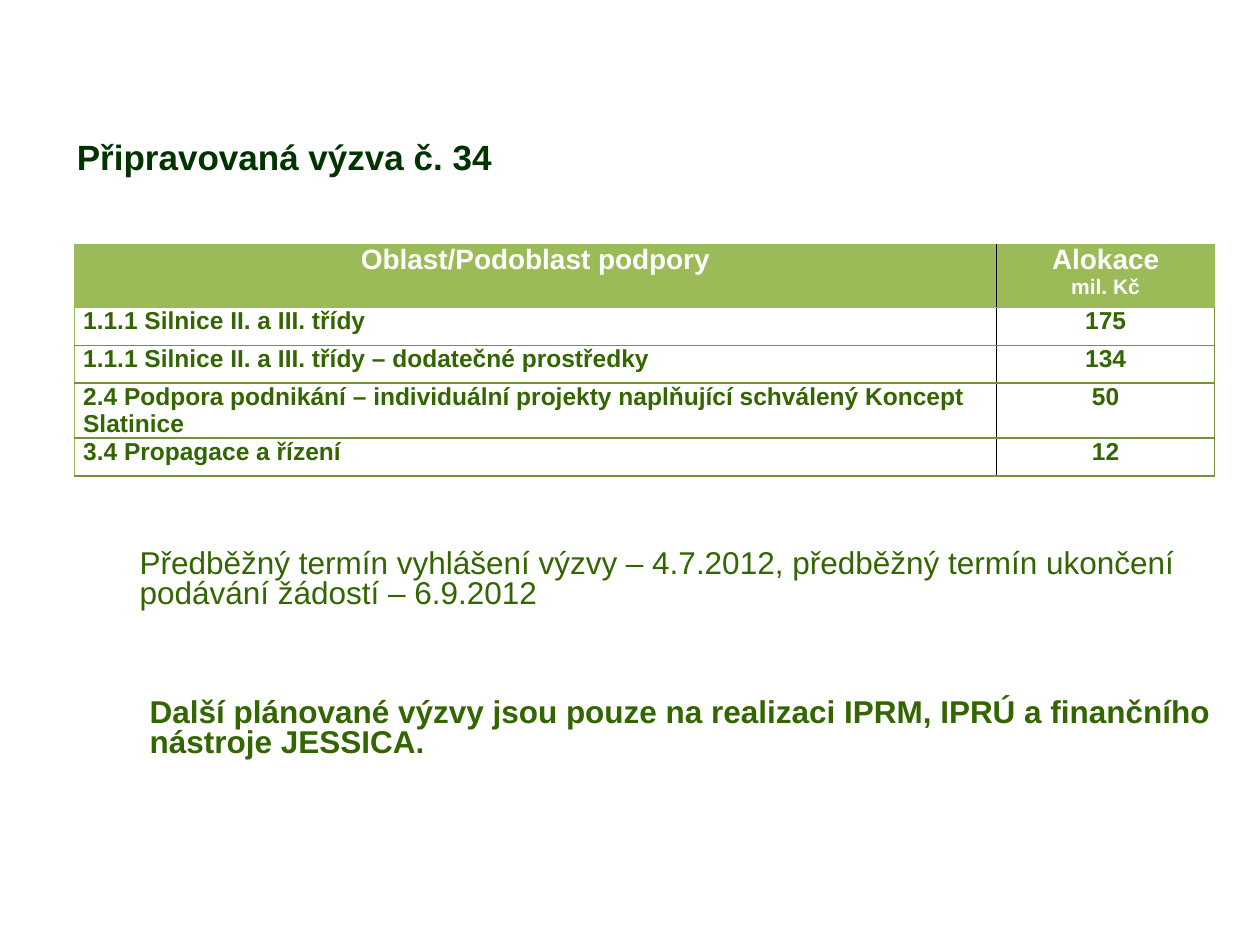
from dataclasses import dataclass

import pptx
import pptx.dml.color
import pptx.enum.text
import pptx.oxml
import pptx.oxml.ns
import pptx.util

Inches = pptx.util.Inches
ALIGN = pptx.enum.text.PP_ALIGN


@dataclass(frozen=True)
class Theme:
    font: str = "Arial"
    title: str = "003300"
    text: str = "336600"
    white: str = "FFFFFF"
    header: str = "9BBB59"
    rule: str = "76923C"
    divider: str = "000000"
    title_size: int = 20
    note_size: int = 18
    header_size: int = 16
    cell_size: int = 14
    unit_size: int = 12
    line_spacing: float = 0.8


class SlideBuilder:
    def __init__(self, page, theme):
        self.page = page
        self.theme = theme

    def style(self, para, size, color, bold=True, align=ALIGN.LEFT):
        para.alignment = align
        for span in para.runs:
            span.font.name = self.theme.font
            span.font.size = pptx.util.Pt(size)
            span.font.bold = bold
            span.font.color.rgb = pptx.dml.color.RGBColor.from_string(color)

    def fill_box(self, box, text, size, color, bold):
        frame = box.text_frame
        frame.word_wrap = True
        frame.auto_size = pptx.enum.text.MSO_AUTO_SIZE.NONE
        frame.vertical_anchor = pptx.enum.text.MSO_ANCHOR.TOP
        frame.text = text
        para = frame.paragraphs[0]
        para.line_spacing = self.theme.line_spacing
        self.style(para, size, color, bold)

    def title(self, text, left, top, width, height):
        box = self.page.shapes.title
        box.left, box.top = Inches(left), Inches(top)
        box.width, box.height = Inches(width), Inches(height)
        self.fill_box(box, text, self.theme.title_size, self.theme.title, True)

    def note(self, text, left, top, width, height, bold=False):
        box = self.page.shapes.add_textbox(
            Inches(left), Inches(top), Inches(width), Inches(height))
        self.fill_box(box, text, self.theme.note_size, self.theme.text, bold)

    def borders(self, cell, sides):
        properties = cell._tc.get_or_add_tcPr()
        namespace = pptx.oxml.ns.nsdecls("a")
        drawn = [side for side in "LRTB" if side in sides]
        for index, side in enumerate(drawn):
            properties.insert(index, pptx.oxml.parse_xml(
                f'<a:ln{side} {namespace} w="12700"><a:solidFill>'
                f'<a:srgbClr val="{sides[side]}"/></a:solidFill></a:ln{side}>'))

    def cell(self, cell, text, header, first_column, below_header):
        theme = self.theme
        cell.margin_left = cell.margin_right = Inches(0.07)
        cell.margin_top = cell.margin_bottom = 0
        cell.text_frame.text = text
        align = ALIGN.CENTER if header or not first_column else ALIGN.LEFT
        size = theme.header_size if header else theme.cell_size
        color = theme.white if header else theme.text
        for index, para in enumerate(cell.text_frame.paragraphs):
            self.style(para, theme.unit_size if index else size, color, align=align)

        if header:
            cell.fill.solid()
            cell.fill.fore_color.rgb = pptx.dml.color.RGBColor.from_string(theme.header)
        else:
            cell.fill.background()

        sides = {
            "T": theme.header if header or below_header else theme.rule,
            "B": theme.header if header else theme.rule,
        }
        if first_column:
            sides.update(L=theme.header, R=theme.divider)
        else:
            sides.update(L=theme.divider, R=theme.header if header else theme.rule)
        self.borders(cell, sides)

    def table(self, rows, left, top, widths, heights):
        grid = self.page.shapes.add_table(
            len(rows), len(widths), Inches(left), Inches(top),
            Inches(sum(widths)), Inches(sum(heights))).table
        grid.horz_banding = False
        for column, width in zip(grid.columns, widths):
            column.width = Inches(width)
        for row, height in zip(grid.rows, heights):
            row.height = Inches(height)
        for row_index, values in enumerate(rows):
            for column_index, value in enumerate(values):
                self.cell(grid.cell(row_index, column_index), value,
                          row_index == 0, column_index == 0, row_index == 1)


def main():
    deck = pptx.Presentation()
    deck.slide_width, deck.slide_height = Inches(10), Inches(7.5)
    page = deck.slides.add_slide(deck.slide_layouts.get_by_name("Title Only"))
    builder = SlideBuilder(page, Theme())

    builder.title("Připravovaná výzva č. 34", 0.51, 1.09, 9.13, 0.5)
    builder.table(
        [
            ("Oblast/Podoblast podpory", "Alokace\nmil. Kč"),
            ("1.1.1 Silnice II. a III. třídy", "175"),
            ("1.1.1 Silnice II. a III. třídy – dodatečné prostředky", "134"),
            ("2.4 Podpora podnikání – individuální projekty naplňující "
             "schválený Koncept Slatinice", "50"),
            ("3.4 Propagace a řízení", "12"),
        ],
        0.59, 1.94, [7.32, 1.73], [0.5] + [0.3] * 4)
    builder.note(
        "Předběžný termín vyhlášení výzvy – 4.7.2012, předběžný termín "
        "ukončení podávání žádostí – 6.9.2012",
        1.01, 4.32, 8.63, 0.6)
    builder.note(
        "Další plánované výzvy jsou pouze na realizaci IPRM, IPRÚ a "
        "finančního nástroje JESSICA.",
        1.09, 5.5, 8.63, 0.6, bold=True)

    deck.save("out.pptx")


if __name__ == "__main__":
    main()
